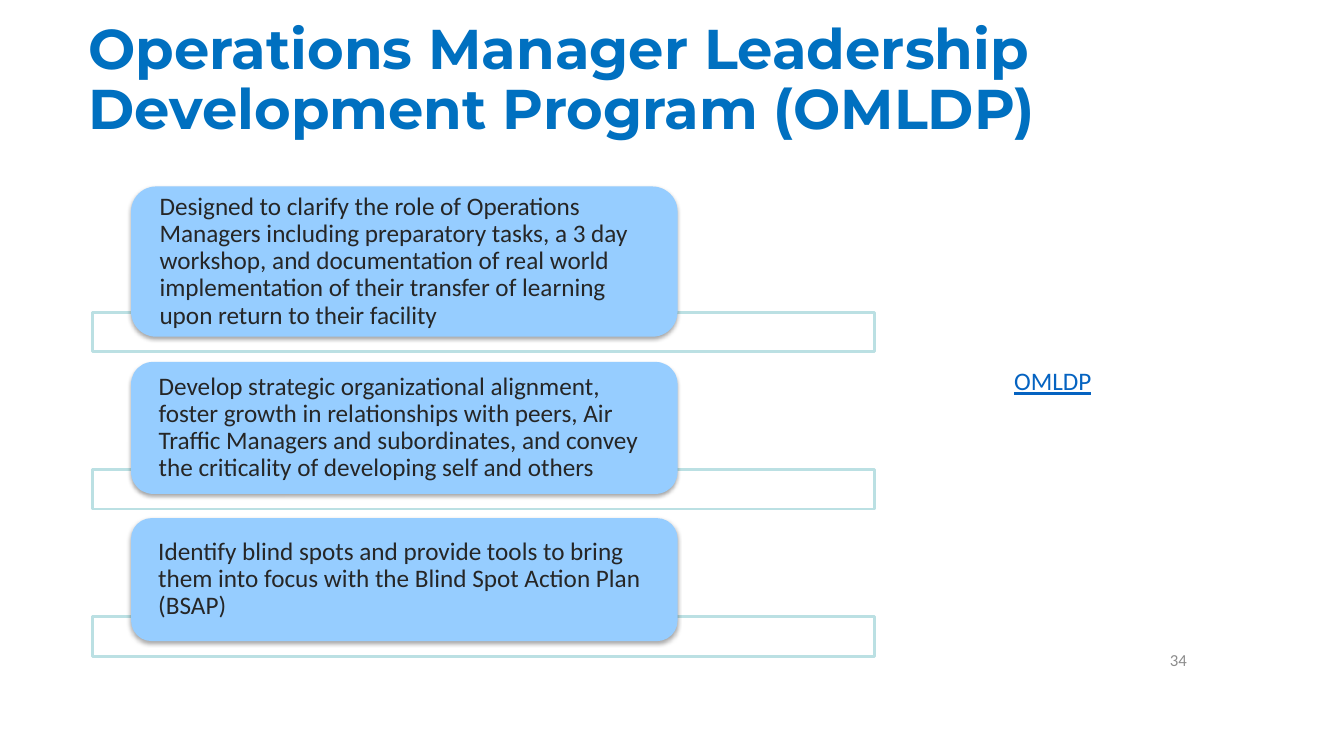
from dataclasses import dataclass

from lxml import etree
from pptx import Presentation
from pptx import util as u
from pptx.dml.color import RGBColor
from pptx.enum import shapes, text
from pptx.oxml import ns

Inches = u.Inches


@dataclass(frozen=True)
class Theme:
    title_font: str = "Montserrat"
    body_font: str = "Calibri"
    title_size: int = 40
    body_size: int = 18
    number_size: int = 12
    title: str = "0070C0"
    body: str = "262626"
    number: str = "8C8C8C"
    link: str = "0563C1"
    card: str = "96CDFF"
    bar: str = "FFFFFF"
    bar_line: str = "BBE0E3"


THEME = Theme()
TITLE = "Operations Manager Leadership Development Program (OMLDP)"
GOALS = [
    (1.85, 1.49, "Designed to clarify the role of Operations Managers including preparatory tasks, "
     "a 3 day workshop, and documentation of real world implementation of their transfer of "
     "learning upon return to their facility"),
    (3.59, 1.31, "Develop strategic organizational alignment, foster growth in relationships with "
     "peers, Air Traffic Managers and subordinates, and convey the criticality of developing "
     "self and others"),
    (5.14, 1.22, "Identify blind spots and provide tools to bring them into focus with the "
     "Blind Spot Action Plan (BSAP)"),
]
BAR_HEIGHT = 0.39
BAR_OVERLAP = 0.24


def rgb(value):
    return RGBColor.from_string(value)


def write(shape, content, size, color, font=THEME.body_font, align=text.PP_ALIGN.LEFT,
          anchor=text.MSO_ANCHOR.MIDDLE, spacing=1.0, bold=False, underline=False):
    frame = shape.text_frame
    frame.text = content
    frame.word_wrap = True
    frame.auto_size = text.MSO_AUTO_SIZE.NONE
    frame.vertical_anchor = anchor
    paragraph = frame.paragraphs[0]
    paragraph.alignment = align
    paragraph.line_spacing = spacing
    run_font = paragraph.runs[0].font
    run_font.name = font
    run_font.size = u.Pt(size)
    run_font.color.rgb = rgb(color)
    run_font.bold = bold
    run_font.underline = underline


def add_title(slide, content):
    title = slide.shapes.title
    title.left, title.top = Inches(0.78), Inches(0.39)
    title.width, title.height = Inches(11.5), Inches(0.83)
    write(title, content, THEME.title_size, THEME.title, THEME.title_font,
          spacing=0.9, bold=True)


def add_label(slide, box, content, size, color, **style):
    label = slide.shapes.add_textbox(*map(Inches, box))
    write(label, content, size, color, **style)


def add_block(slide, kind, box, fill):
    shape = slide.shapes.add_shape(kind, *map(Inches, box))
    shape.shadow.inherit = False
    shape.fill.solid()
    shape.fill.fore_color.rgb = rgb(fill)
    return shape


def add_soft_shadow(shape):
    effects = shape.element.spPr.find(ns.qn("a:effectLst"))
    shadow = etree.SubElement(effects, ns.qn("a:outerShdw"), blurRad=str(u.Pt(3.1)),
                              dist=str(u.Pt(1.8)), dir="5400000", rotWithShape="0")
    color = etree.SubElement(shadow, ns.qn("a:srgbClr"), val="000000")
    etree.SubElement(color, ns.qn("a:alpha"), val="35000")


def add_goal(slide, top, height, content):
    bar_top = top + height - BAR_OVERLAP
    bar = add_block(slide, shapes.MSO_SHAPE.RECTANGLE,
                    (0.92, bar_top, 7.75, BAR_HEIGHT), THEME.bar)
    bar.line.color.rgb = rgb(THEME.bar_line)
    bar.line.width = u.Pt(2)

    card = add_block(slide, shapes.MSO_SHAPE.ROUNDED_RECTANGLE,
                     (1.3, top, 5.42, height), THEME.card)
    card.line.fill.background()
    add_soft_shadow(card)
    frame = card.text_frame
    frame.margin_left = frame.margin_right = Inches(0.21)
    frame.margin_top = frame.margin_bottom = 0
    write(card, content, THEME.body_size, THEME.body, spacing=0.9)


def main():
    presentation = Presentation()
    presentation.slide_width = Inches(13.33)
    presentation.slide_height = Inches(7.5)
    slide = presentation.slides.add_slide(presentation.slide_layouts[5])
    add_title(slide, TITLE)
    for top, height, content in GOALS:
        add_goal(slide, top, height, content)
    add_label(slide, (9.42, 6.35, 2.45, 0.4), "34", THEME.number_size, THEME.number,
              align=text.PP_ALIGN.RIGHT)
    add_label(slide, (9.96, 3.58, 1.08, 0.4), "OMLDP", THEME.body_size, THEME.link,
              anchor=text.MSO_ANCHOR.TOP, underline=True)
    presentation.save("out.pptx")


if __name__ == "__main__":
    main()
